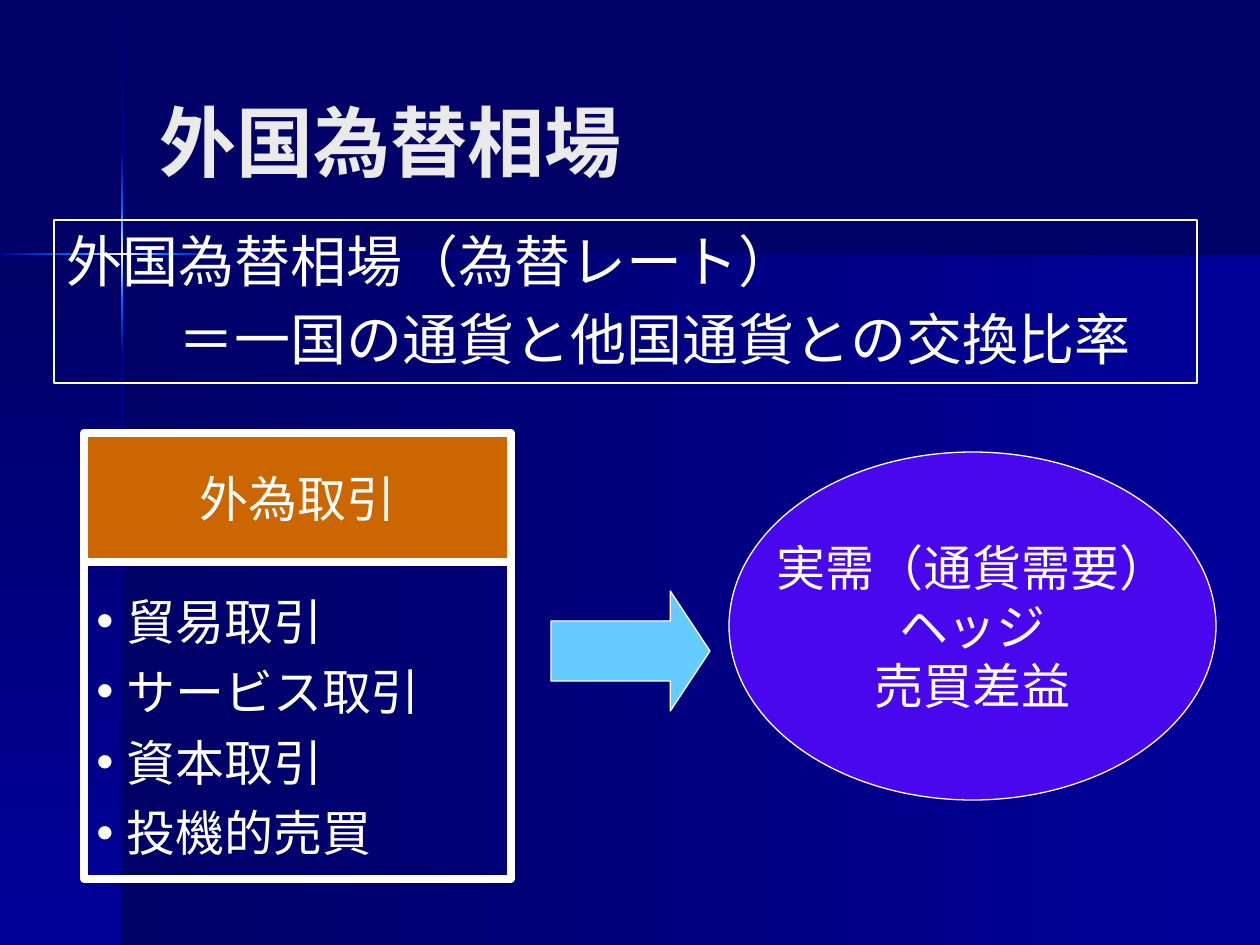
from copy import deepcopy
from dataclasses import dataclass
from itertools import pairwise

from lxml.etree import SubElement
from pptx import Presentation
from pptx.dml.color import RGBColor
from pptx.enum.shapes import MSO_SHAPE
from pptx.enum.text import MSO_ANCHOR, PP_ALIGN
from pptx.oxml.ns import qn
from pptx.util import Emu, Pt


@dataclass(frozen=True)
class Theme:
    night: str = "000066"
    navy: str = "000099"
    azure: str = "0066FF"
    glow: str = "FFFFCC"
    heading: str = "EAEAEA"
    white: str = "FFFFFF"
    orange: str = "CC6600"
    sky: str = "66CCFF"
    violet: str = "4907ED"
    title_font: str = "Cabin"
    label_font: str = "Arial"
    title_size: int = 44
    body_size: int = 32
    label_size: int = 28
    thin: float = 0.75
    thick: float = 4.5


def px(length):
    return Emu(round(length * 914400 / 126))


class SlideBuilder:
    """Draws styled elements on the current slide, with lengths in px."""

    def __init__(self, theme, slide):
        self.theme = theme
        self.slide = slide

    def background(self, color):
        fill = self.slide.background.fill
        fill.solid()
        fill.fore_color.rgb = RGBColor.from_string(color)

    def shape(self, kind, box, fill=None, line=None):
        shape = self.slide.shapes.add_shape(kind, *map(px, box))
        shape.shadow.inherit = False
        if fill:
            shape.fill.solid()
            shape.fill.fore_color.rgb = RGBColor.from_string(fill)
        else:
            shape.fill.background()
        if line:
            shape.line.color.rgb = RGBColor.from_string(self.theme.white)
            shape.line.width = Pt(line)
        else:
            shape.line.fill.background()
        return shape

    def gradient(self, box, colors, downward):
        band = self.shape(MSO_SHAPE.RECTANGLE, box)
        band.fill.gradient()
        band.fill.gradient_angle = 270 if downward else 0
        stops = band._element.spPr.find(qn("a:gradFill")).find(qn("a:gsLst"))
        for _ in colors[2:]:
            stops.append(deepcopy(stops[-1]))
        for index, (stop, color) in enumerate(zip(band.fill.gradient_stops, colors)):
            stop.position = index / (len(colors) - 1)
            stop.color.rgb = RGBColor.from_string(color)

    def beam(self, edges, ramps, offset, downward):
        for (start, end), colors in zip(pairwise(edges), ramps):
            along = end - start
            box = (offset, start, 2, along) if downward else (start, offset, along, 2)
            self.gradient(box, colors, downward)

    def textbox(self, box):
        return self.slide.shapes.add_textbox(*map(px, box))

    def text(self, holder, lines, size, font, color=None, bold=False,
             align=PP_ALIGN.LEFT, anchor=MSO_ANCHOR.MIDDLE, wrap=True):
        frame = holder.text_frame
        frame.word_wrap = wrap
        frame.vertical_anchor = anchor
        for index, line in enumerate(lines):
            paragraph = frame.paragraphs[0] if index == 0 else frame.add_paragraph()
            paragraph.alignment = align
            run = paragraph.add_run()
            run.text = line
            run.font.size = Pt(size)
            run.font.name = font
            run.font.bold = bold
            run.font.color.rgb = RGBColor.from_string(color or self.theme.white)
        return frame.paragraphs

    def indent(self, paragraph, margin, first=0):
        properties = paragraph._p.get_or_add_pPr()
        properties.set("marL", str(px(margin)))
        properties.set("indent", str(px(first)))
        return properties

    def bullet(self, paragraph):
        paragraph.line_spacing = 1.2
        properties = self.indent(paragraph, 30, -30)
        SubElement(properties, qn("a:buFont")).set("typeface", self.theme.label_font)
        SubElement(properties, qn("a:buChar")).set("char", "•")


def main():
    theme = Theme()
    deck = Presentation()
    deck.slide_width, deck.slide_height = px(1260), px(945)
    builder = SlideBuilder(theme, deck.slides.add_slide(deck.slide_layouts[6]))

    builder.background(theme.night)
    builder.gradient((122, 255, 1138, 690), (theme.night, theme.navy), False)
    builder.gradient((0, 255, 122, 690), (theme.night, theme.navy), True)
    ramps = [
        (theme.night, theme.navy),
        (theme.navy, theme.azure),
        (theme.azure, theme.glow, theme.azure),
        (theme.azure, theme.navy),
        (theme.navy, theme.night),
    ]
    builder.beam((1, 152, 208, 300, 355, 945), ramps, 121, True)
    builder.beam((0, 76, 168, 223, 1260), ramps[1:], 253, False)

    title = builder.textbox((147, 42, 1040, 198))
    builder.text(title, ["外国為替相場"], theme.title_size, theme.title_font,
                 theme.heading, bold=True)

    definition = builder.shape(MSO_SHAPE.RECTANGLE, (54, 220, 1143, 163), line=theme.thin)
    term, meaning = builder.text(
        definition, ["外国為替相場（為替レート）", "＝一国の通貨と他国通貨との交換比率"],
        theme.body_size, theme.title_font, anchor=MSO_ANCHOR.TOP)
    builder.indent(term, 48, -48)
    builder.indent(meaning, 112)
    for paragraph in (term, meaning):
        paragraph.space_before = Pt(theme.body_size * 0.2)

    trade_header = builder.shape(MSO_SHAPE.RECTANGLE, (84, 433, 427, 129),
                                 theme.orange, theme.thick)
    builder.text(trade_header, ["外為取引"], theme.label_size, theme.label_font,
                 align=PP_ALIGN.CENTER, wrap=False)

    trade_types = builder.shape(MSO_SHAPE.RECTANGLE, (84, 562, 427, 317), line=theme.thick)
    for paragraph in builder.text(
            trade_types, ["貿易取引", "サービス取引", "資本取引", "投機的売買"],
            theme.label_size, theme.label_font):
        builder.bullet(paragraph)

    arrow = builder.shape(MSO_SHAPE.RIGHT_ARROW, (551, 591, 159, 120), theme.sky, theme.thin)
    arrow.adjustments[0] = 0.5
    arrow.adjustments[1] = 0.33

    motives = builder.shape(MSO_SHAPE.OVAL, (729, 452, 487, 348), theme.violet, theme.thin)
    builder.text(motives, ["実需（通貨需要）", "ヘッジ", "売買差益"], theme.label_size,
                 theme.label_font, align=PP_ALIGN.CENTER, wrap=False)

    deck.save("out.pptx")


if __name__ == "__main__":
    main()
